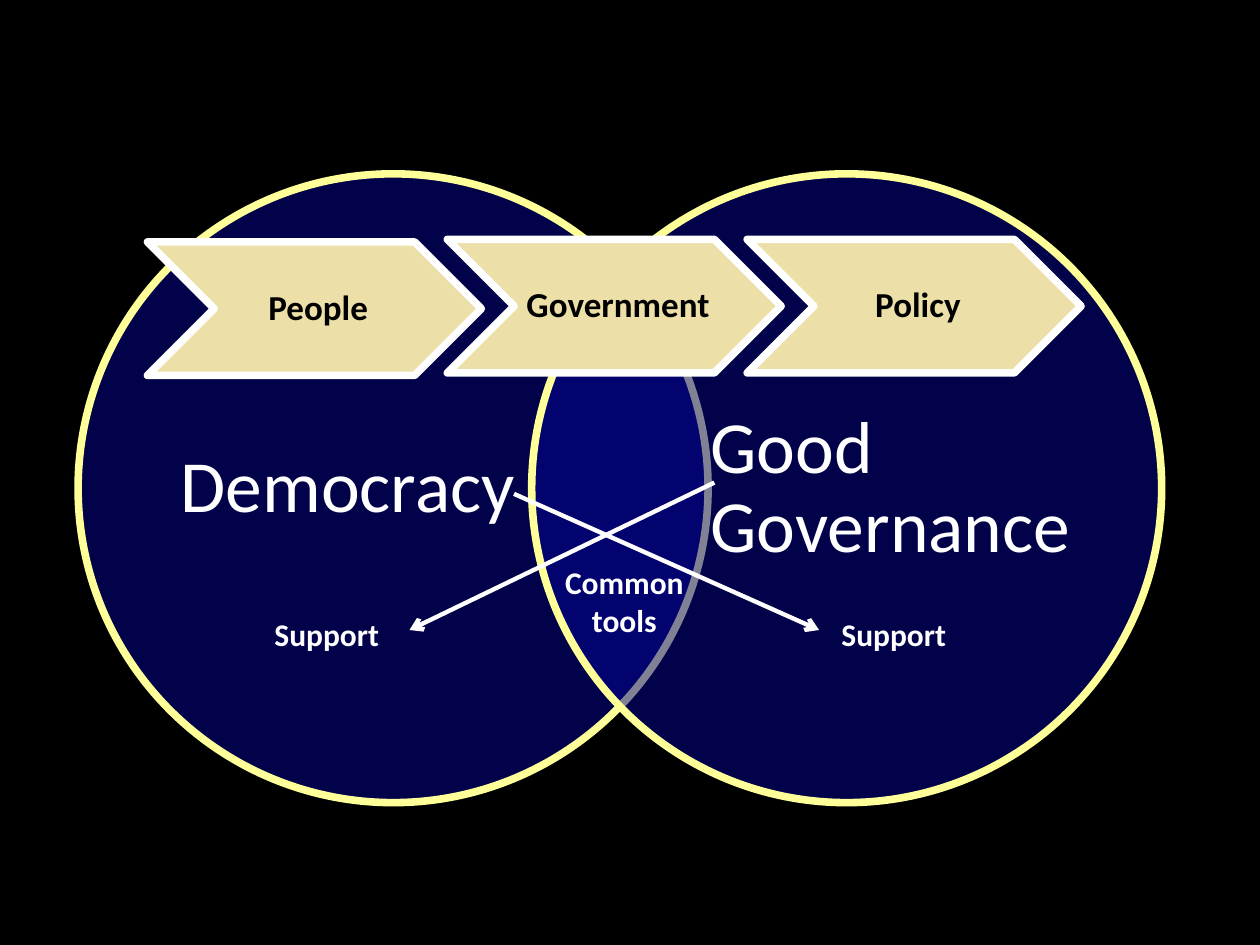
"""Build a slide relating democracy and good governance with two overlapping circles."""
from dataclasses import dataclass

from lxml import etree
from pptx import Presentation
from pptx import util as u
from pptx.dml.color import RGBColor
from pptx.enum import shapes, text
from pptx.oxml import ns

FONT = "Calibri"
BLACK = RGBColor(0x00, 0x00, 0x00)
WHITE = RGBColor(0xFF, 0xFF, 0xFF)
NAVY = RGBColor(0x05, 0x05, 0x95)
YELLOW = RGBColor(0xFF, 0xFF, 0x99)
SAND = RGBColor(0xEC, 0xDF, 0xA7)
OUTLINE = u.Pt(4.33)
CENTER = text.PP_ALIGN.CENTER
LEFT = text.PP_ALIGN.LEFT


@dataclass(frozen=True)
class Area:
    left: float
    top: float
    width: float
    height: float

    def lengths(self) -> tuple:
        return tuple(map(u.Inches, (self.left, self.top, self.width, self.height)))


@dataclass(frozen=True)
class Label:
    wording: str
    area: Area
    size: int = 18
    color: RGBColor = WHITE
    bold: bool = True
    align: text.PP_ALIGN = LEFT
    anchor: text.MSO_ANCHOR = text.MSO_ANCHOR.TOP
    insets: tuple = (0.1, 0.05, 0.1, 0.05)
    spacing: float = 1.0


@dataclass(frozen=True)
class Circle:
    area: Area
    label: Label


@dataclass(frozen=True)
class Step:
    name: str
    left: float
    top: float


@dataclass(frozen=True)
class Arrow:
    start: tuple
    end: tuple


def circle_label(wording: str, left: float, align: text.PP_ALIGN) -> Label:
    return Label(wording, Area(left, 1.97, 2.88, 3.82), 42, bold=False, align=align,
                 anchor=text.MSO_ANCHOR.MIDDLE, insets=(0, 0, 0, 0), spacing=0.9)


CIRCLES = [
    Circle(Area(0.62, 1.38, 5, 4.99), circle_label("Democracy", 1.32, CENTER)),
    Circle(Area(4.22, 1.38, 5, 4.99), circle_label("Good Governance", 5.64, LEFT)),
]
COMMON_TOOLS = Label("Common tools", Area(4.33, 4.42, 1.25, 0.71), align=CENTER)
ARROWS = [Arrow((4.08, 3.92), (6.5, 5)), Arrow((5.67, 3.83), (3.25, 5))]
STEPS = [Step("People", 1.17, 1.92), Step("Government", 3.55, 1.9), Step("Policy", 5.93, 1.9)]
SUPPORTS = [Label("Support", Area(left, 4.83, 1.42, 0.42)) for left in (6.58, 2.08)]


def draw_label(canvas, label: Label) -> None:
    box = canvas.add_textbox(*label.area.lengths())
    frame = box.text_frame
    frame.word_wrap = True
    frame.vertical_anchor = label.anchor
    (frame.margin_left, frame.margin_top,
     frame.margin_right, frame.margin_bottom) = map(u.Inches, label.insets)
    para = frame.paragraphs[0]
    para.alignment = label.align
    para.line_spacing = label.spacing
    span = para.add_run()
    span.text = label.wording
    span.font.name = FONT
    span.font.size = u.Pt(label.size)
    span.font.bold = label.bold
    span.font.color.rgb = label.color


def draw_shape(canvas, kind: shapes.MSO_SHAPE, area: Area, fill: RGBColor, line: RGBColor):
    shape = canvas.add_shape(kind, *area.lengths())
    shape.shadow.inherit = False
    shape.fill.solid()
    shape.fill.fore_color.rgb = fill
    shape.line.color.rgb = line
    shape.line.width = OUTLINE
    return shape


def draw_circle(canvas, circle: Circle) -> None:
    shape = draw_shape(canvas, shapes.MSO_SHAPE.OVAL, circle.area, NAVY, YELLOW)
    color = shape.element.spPr.find(ns.qn("a:solidFill")).find(ns.qn("a:srgbClr"))
    etree.SubElement(color, ns.qn("a:alpha"), val="50000")
    draw_label(canvas, circle.label)


def draw_step(canvas, step: Step) -> None:
    width, height = 2.65, 1.06
    area = Area(step.left, step.top, width, height)
    draw_shape(canvas, shapes.MSO_SHAPE.CHEVRON, area, SAND, WHITE)
    notch = height / 2
    inner = Area(step.left + notch, step.top, width - 2 * notch, height)
    draw_label(canvas, Label(step.name, inner, 20, BLACK, align=CENTER,
                             anchor=text.MSO_ANCHOR.MIDDLE,
                             insets=(0.09, 0.03, 0.03, 0.03), spacing=0.9))


def draw_arrow(canvas, arrow: Arrow) -> None:
    connector = canvas.add_connector(shapes.MSO_CONNECTOR.STRAIGHT,
                                     *map(u.Inches, arrow.start + arrow.end))
    connector.line.color.rgb = WHITE
    connector.line.width = u.Pt(2.5)
    etree.SubElement(connector.line._get_or_add_ln(), ns.qn("a:tailEnd"), type="arrow")
    etree.SubElement(connector.element.spPr, ns.qn("a:effectLst"))


def main() -> None:
    deck = Presentation()
    deck.slide_width, deck.slide_height = u.Inches(10), u.Inches(7.5)
    page = deck.slides.add_slide(deck.slide_layouts.get_by_name("Blank"))
    page.background.fill.solid()
    page.background.fill.fore_color.rgb = BLACK

    venn = page.shapes.add_group_shape().shapes
    for circle in CIRCLES:
        draw_circle(venn, circle)
    draw_label(page.shapes, COMMON_TOOLS)
    for arrow in ARROWS:
        draw_arrow(page.shapes, arrow)
    process = page.shapes.add_group_shape().shapes
    for step in STEPS:
        draw_step(process, step)
    for support in SUPPORTS:
        draw_label(page.shapes, support)
    deck.save("out.pptx")


if __name__ == "__main__":
    main()
